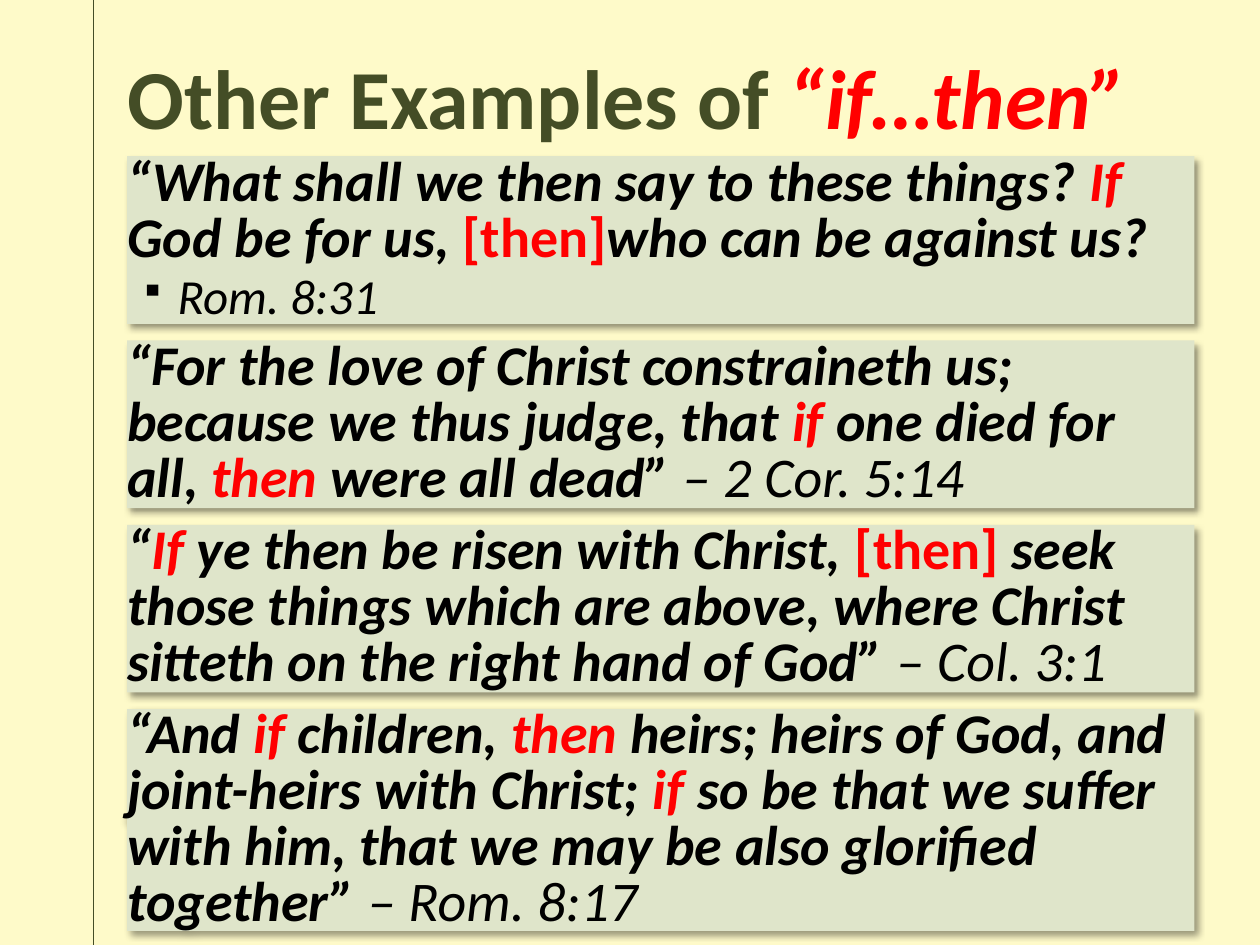
from lxml.etree import SubElement
from pptx import Presentation
from pptx.dml.color import RGBColor
from pptx.enum.shapes import MSO_CONNECTOR, MSO_SHAPE
from pptx.enum.text import MSO_ANCHOR, MSO_AUTO_SIZE, PP_ALIGN
from pptx.oxml.ns import qn
from pptx.util import Pt

FONT = "Calibri"
OLIVE, RED, BLACK = "444D26", "FF0000", "000000"
CREAM, SAGE = "FEFAC9", "DFE5CA"

# Run styles: colour, bold, italic
HEADING = (OLIVE, True, False)
QUOTE = (BLACK, True, True)
KEYWORD = (RED, True, True)
ADDED = (RED, True, False)
CITATION = (BLACK, False, True)

LEFT, WIDTH = 72.7, 609.8
FIRST_TOP, GAP = 89.3, 9.5
THREE_LINES, FOUR_LINES = 95.8, 126.7


def rgb(value):
    return RGBColor.from_string(value)


class VerseSlide:
    def __init__(self, prs):
        self.s = prs.slides.add_slide(prs.slide_layouts[5])
        self.height = prs.slide_height.pt
        fill = self.s.background.fill
        fill.solid()
        fill.fore_color.rgb = rgb(CREAM)

    def runs(self, p, parts, size):
        p.alignment = PP_ALIGN.LEFT
        for text, (color, bold, italic) in parts:
            r = p.add_run()
            r.text = text
            r.font.name, r.font.size = FONT, Pt(size)
            r.font.bold, r.font.italic = bold, italic
            r.font.color.rgb = rgb(color)

    def frame(self, sp, anchor):
        tf = sp.text_frame
        tf.word_wrap = True
        tf.auto_size = MSO_AUTO_SIZE.NONE
        tf.vertical_anchor = anchor
        tf.margin_left = tf.margin_right = tf.margin_top = tf.margin_bottom = 0
        return tf

    def rule(self, x):
        line = self.s.shapes.add_connector(
            MSO_CONNECTOR.STRAIGHT, Pt(x), 0, Pt(x), Pt(self.height))
        line.line.color.rgb = rgb(OLIVE)
        line.line.width = Pt(0.75)
        SubElement(line._element.spPr, qn("a:effectLst"))

    def title(self, parts):
        sp = self.s.shapes.title
        sp.left, sp.top, sp.width, sp.height = Pt(LEFT), Pt(23), Pt(647.3), Pt(64)
        tf = self.frame(sp, MSO_ANCHOR.MIDDLE)
        self.runs(tf.paragraphs[0], parts, 48)

    def shadow(self, sp):
        sp.shadow.inherit = False
        effects = sp._element.spPr.find(qn("a:effectLst"))
        outer = SubElement(effects, qn("a:outerShdw"), blurRad=str(Pt(4)),
                           dist=str(Pt(3)), dir="2700000", algn="tl",
                           rotWithShape="0")
        color = SubElement(outer, qn("a:srgbClr"), val=BLACK)
        SubElement(color, qn("a:alpha"), val="40000")

    def verse(self, top, height, parts, reference=None):
        sp = self.s.shapes.add_shape(
            MSO_SHAPE.RECTANGLE, Pt(LEFT), Pt(top), Pt(WIDTH), Pt(height))
        sp.fill.solid()
        sp.fill.fore_color.rgb = rgb(SAGE)
        sp.line.fill.background()
        self.shadow(sp)
        tf = self.frame(sp, MSO_ANCHOR.TOP)
        self.runs(tf.paragraphs[0], parts, 32)
        if reference:
            p = tf.add_paragraph()
            self.runs(p, [(reference, CITATION)], 28)
            self.bullet(p)
        for p in tf.paragraphs:
            p.line_spacing = Pt(32)

    def bullet(self, p):
        pPr = p._p.get_or_add_pPr()
        pPr.set("marL", str(Pt(28.8)))
        pPr.set("indent", str(Pt(-21.6)))
        SubElement(pPr, qn("a:buSzPct"), val="70000")
        SubElement(pPr, qn("a:buChar"), char="▪")


VERSES = [
    (THREE_LINES, [
        ("“What shall we then say to these things? ", QUOTE), ("If", KEYWORD),
        (" God be for us, ", QUOTE), ("[then]", ADDED),
        ("who can be against us?", QUOTE)], "Rom. 8:31"),
    (THREE_LINES, [
        ("“For the love of Christ constraineth us; because we thus judge, that ",
         QUOTE), ("if", KEYWORD), (" one died for all, ", QUOTE),
        ("then", KEYWORD), (" were all dead” ", QUOTE),
        ("– 2 Cor. 5:14", CITATION)], None),
    (THREE_LINES, [
        ("“", QUOTE), ("If", KEYWORD), (" ye then be risen with Christ, ", QUOTE),
        ("[then] ", ADDED),
        ("seek those things which are above, where Christ sitteth on the "
         "right hand of God” ", QUOTE), ("– Col. 3:1", CITATION)], None),
    (FOUR_LINES, [
        ("“And ", QUOTE), ("if", KEYWORD), (" children, ", QUOTE),
        ("then", KEYWORD),
        (" heirs; heirs of God, and joint-heirs with Christ; ", QUOTE),
        ("if", KEYWORD),
        (" so be that we suffer with him, that we may be also glorified "
         "together” ", QUOTE), ("– Rom. 8:17", CITATION)], None),
]


def main():
    prs = Presentation()
    prs.slide_width, prs.slide_height = Pt(720), Pt(540)
    slide = VerseSlide(prs)

    # Margin rule and title
    slide.rule(53.3)
    slide.title([("Other Examples of ", HEADING), ("“if…then”", KEYWORD)])

    # Stacked verses
    top = FIRST_TOP
    for height, parts, reference in VERSES:
        slide.verse(top, height, parts, reference)
        top += height + GAP

    prs.save("out.pptx")


if __name__ == "__main__":
    main()
